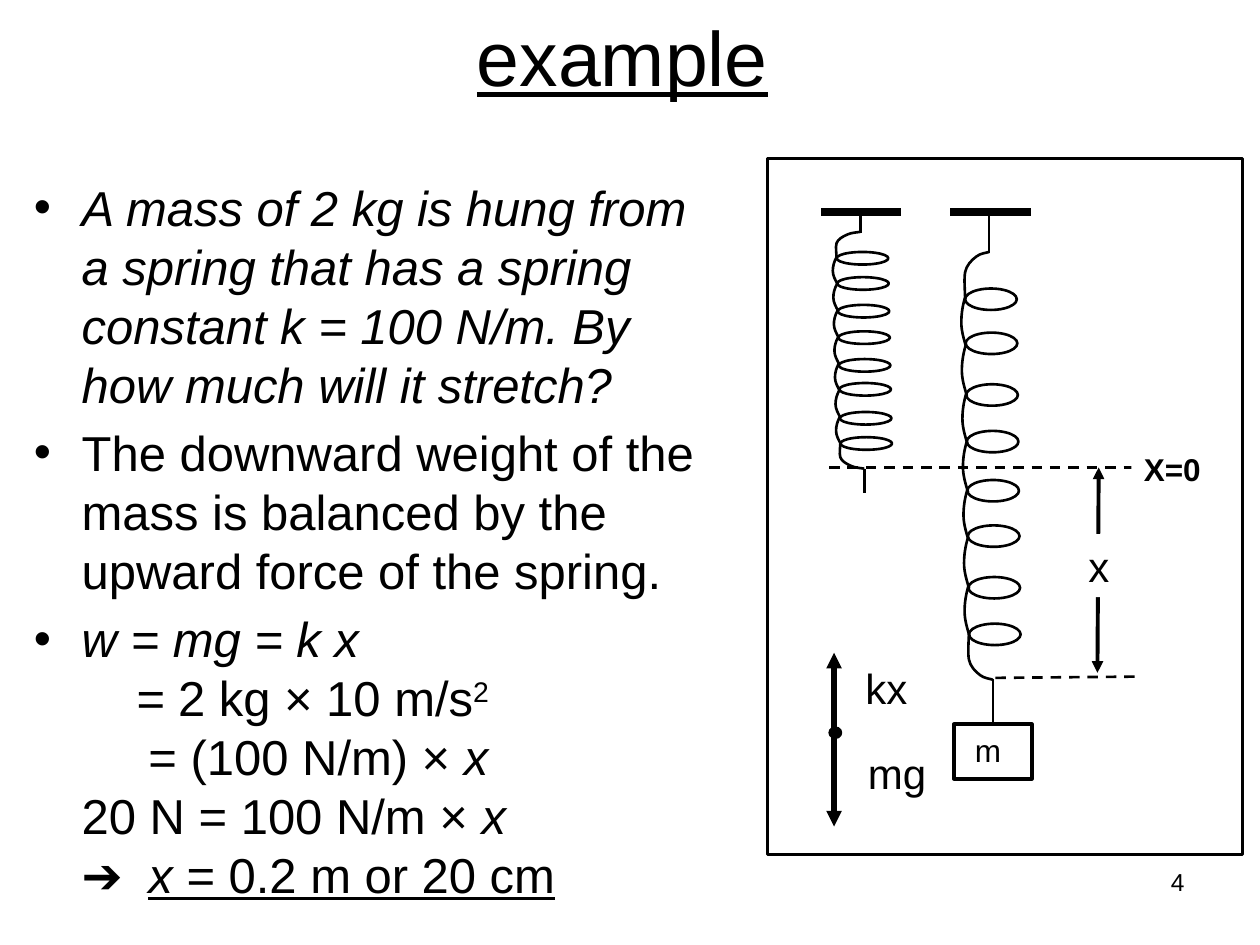
from lxml.etree import SubElement
from pptx import Presentation
from pptx.dml.color import RGBColor
from pptx.enum.dml import MSO_LINE_DASH_STYLE as DASH
from pptx.enum.shapes import MSO_CONNECTOR as CONN, MSO_SHAPE as SHAPE
from pptx.enum.text import MSO_ANCHOR as ANCHOR, PP_ALIGN as ALIGN
from pptx.oxml.ns import qn
from pptx.util import Inches, Pt

rgb = RGBColor.from_string
BLACK, WHITE = "000000", "FFFFFF"

prs = Presentation()
prs.slide_width, prs.slide_height = Inches(10), Inches(7.5)
s = prs.slides.add_slide(prs.slide_layouts[6])


def add_line(x1, y1, x2, y2, width=1.5, dash=False, arrows=False):
    c = s.shapes.add_connector(CONN.STRAIGHT, Inches(x1), Inches(y1), Inches(x2), Inches(y2))
    c.line.color.rgb = rgb(BLACK)
    c.line.width = Pt(width)
    if dash:
        c.line.dash_style = DASH.DASH
    if arrows:
        for end in ("a:headEnd", "a:tailEnd"):
            SubElement(c.line._get_or_add_ln(), qn(end), type="triangle")
    SubElement(c._element.spPr, qn("a:effectLst"))
    return c


def add_run(p, text, size, bold=False, italic=False, underline=False):
    r = p.add_run()
    r.text = text
    f = r.font
    f.name, f.size = "Arial", Pt(size)
    f.bold, f.italic, f.underline = bold, italic, underline
    f.color.rgb = rgb(BLACK)
    return r


sp = s.shapes.add_textbox(Inches(0.44), Inches(0), Inches(9), Inches(0.88))
tf = sp.text_frame
tf.word_wrap = True
tf.vertical_anchor = ANCHOR.MIDDLE
tf.paragraphs[0].alignment = ALIGN.CENTER
add_run(tf.paragraphs[0], "example", 44, underline=True)

body = [
    (0.38, -0.38, True, [("A mass of 2 kg is hung from a spring that has a spring constant "
                          "k = 100 N/m. By how much will it stretch?", "i")]),
    (0.38, -0.38, True, [("The downward weight of the mass is balanced by the upward force "
                          "of the spring.", "")]),
    (0.38, -0.38, True, [("w = mg = k x", "i")]),
    (0.81, 0, False, [("= ", "i"), ("2 kg × 10 m/s", ""), ("2", "^")]),
    (0.91, 0, False, [("= (100 N/m) × ", ""), ("x", "i")]),
    (0.38, 0, False, [("20 N = 100 N/m × ", ""), ("x", "i")]),
    (0.91, -0.53, False, [("➔\t", ""), ("x", "iu"), (" = 0.2 m or 20 cm", "u")]),
]
sp = s.shapes.add_textbox(Inches(0.17), Inches(1.36), Inches(5.69), Inches(6))
tf = sp.text_frame
tf.word_wrap = True
for i, (margin, indent, bullet, runs) in enumerate(body):
    p = tf.add_paragraph() if i else tf.paragraphs[0]
    p.space_before = Pt(5.6 if bullet else 0)
    pPr = p._p.get_or_add_pPr()
    pPr.set("marL", str(Inches(margin)))
    pPr.set("indent", str(Inches(indent)))
    if bullet:
        SubElement(pPr, qn("a:buFont"), typeface="Arial")
        SubElement(pPr, qn("a:buChar"), char="•")
    else:
        SubElement(pPr, qn("a:buNone"))
    for text, style in runs:
        r = add_run(p, text, 28, italic="i" in style, underline="u" in style)
        if "^" in style:
            r.font._element.set("baseline", "30000")

add_line(6.58, 3.71, 9.14, 3.71, dash=True)
add_line(7.9, 5.38, 9.05, 5.37, dash=True)
add_line(8.72, 3.71, 8.71, 5.34, 2.25, arrows=True)
add_line(6.62, 5.18, 6.62, 6.56, 3, arrows=True)

for text, x, y, w, h, size, bold, fill in [
    ("X=0", 8.98, 3.52, 0.65, 0.4, 18, True, True),
    ("x", 8.54, 4.24, 0.37, 0.5, 24, False, True),
    ("mg", 6.79, 5.88, 0.66, 0.5, 24, False, False),
    ("kx", 6.77, 5.21, 0.53, 0.5, 24, False, False),
]:
    sp = s.shapes.add_textbox(Inches(x), Inches(y), Inches(w), Inches(h))
    sp.text_frame.word_wrap = False
    if fill:
        sp.fill.solid()
        sp.fill.fore_color.rgb = rgb(WHITE)
    add_run(sp.text_frame.paragraphs[0], text, size, bold)

outlines = [
    (SHAPE.OVAL, 6.58, 5.77, 0.1, 0.09, 0.75),
    (SHAPE.RECTANGLE, 6.09, 1.26, 3.77, 5.52, 1.5),
    (SHAPE.RECTANGLE, 7.57, 5.75, 0.62, 0.43, 2.25),
]
curves = []
for x, top, pitch, arc, hook, coil, coils in [
    (6.64, 2.04, 0.21, 0.22, 0.2, 0.1, [2, 2.2, 2.42, 2.63, 2.85, 3.04, 3.27, 3.47]),
    (7.66, 2.36, 0.38, 0.4, 0.36, 0.17, [2.29, 2.64, 3.05, 3.42, 3.81, 4.17, 4.58, 4.95]),
]:
    bottom = coils[-1] + coil / 2
    pitch = (bottom - top) / 7
    for i, y in enumerate(coils):
        outlines.append((SHAPE.OVAL, x + 0.03 * i / 7, y, 0.41, coil, 1.5))
    for i in range(7):
        ax, ay = x + 0.03 * i / 7, top + pitch * i
        curves.append([(ax + dx, ay + arc * t) for dx, t in [
            (0, 0), (-0.02, 0.17), (-0.03, 0.33), (-0.03, 0.5),
            (-0.03, 0.67), (-0.01, 0.83), (0.01, 1)]])
    for hx, hy, height in [(x - 0.01, top, -hook), (x + 0.02, bottom, hook)]:
        curves.append([(hx + dx, hy + height * t) for dx, t in [
            (0.2, 1), (0.18, 0.98), (0.13, 0.97), (0.1, 0.9), (0.06, 0.82),
            (0.02, 0.7), (0.01, 0.55), (0, 0.4), (0.01, 0.1), (0.01, 0)]])

for kind, x, y, w, h, width in outlines:
    sp = s.shapes.add_shape(kind, Inches(x), Inches(y), Inches(w), Inches(h))
    sp.shadow.inherit = False
    sp.line.color.rgb = rgb(BLACK)
    sp.line.width = Pt(width)
    if width < 1:
        sp.fill.solid()
        sp.fill.fore_color.rgb = rgb(BLACK)
    else:
        sp.fill.background()
    if width == 2.25:
        mass = sp
mass.text_frame.word_wrap = True
mass.text_frame.vertical_anchor = ANCHOR.TOP
mass.text_frame.paragraphs[0].alignment = ALIGN.LEFT
add_run(mass.text_frame.paragraphs[0], " m", 18)

for pts in curves:
    pts = [(Inches(x), Inches(y)) for x, y in pts]
    fb = s.shapes.build_freeform(*pts[0])
    fb.add_line_segments(pts[1:], close=False)
    sp = fb.convert_to_shape()
    segments = list(sp._element.iter(qn("a:lnTo")))
    outline = segments[0].getparent()
    for k in range(0, len(segments), 3):
        bezier = SubElement(outline, qn("a:cubicBezTo"))
        for segment in segments[k:k + 3]:
            bezier.append(segment[0])
            outline.remove(segment)
    sp.shadow.inherit = False
    sp.fill.background()
    sp.line.color.rgb = rgb(BLACK)
    sp.line.width = Pt(1.5)

add_line(6.83, 1.85, 6.83, 1.65)
add_line(6.86, 3.72, 6.86, 3.91)
add_line(7.85, 2.01, 7.85, 1.65)
add_line(7.88, 5.39, 7.88, 5.75).end_connect(mass, 0)
add_line(6.52, 1.68, 7.15, 1.68, 4.5)
add_line(7.54, 1.68, 8.18, 1.68, 4.5)

sp = s.shapes.add_textbox(Inches(7.17), Inches(6.83), Inches(2.33), Inches(0.52))
sp.text_frame.word_wrap = True
p = sp.text_frame.paragraphs[0]
p.alignment = ALIGN.RIGHT
add_run(p, "4", 14)

prs.save("out.pptx")
